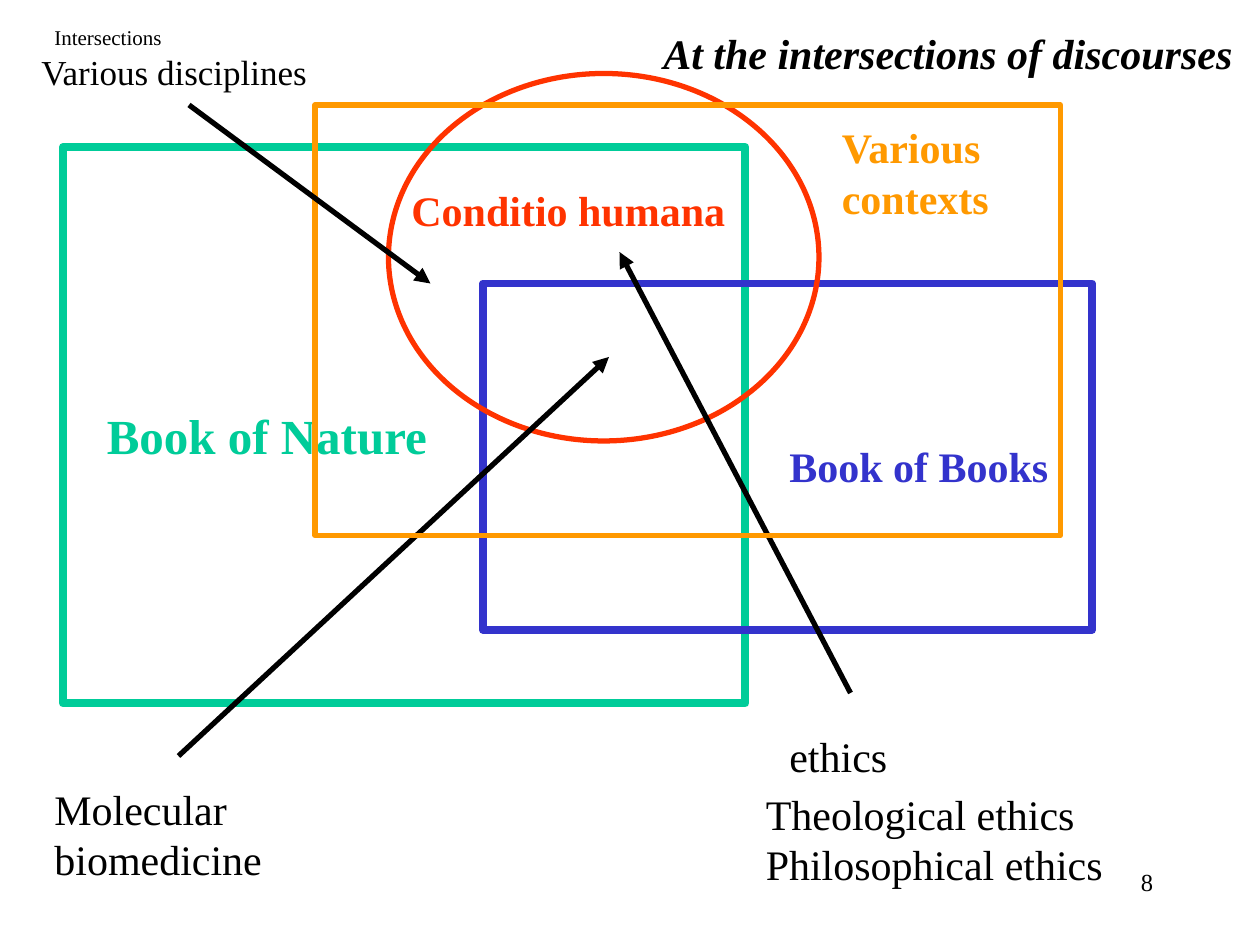
from typing import NamedTuple

from lxml.etree import SubElement
from pptx import Presentation
from pptx.dml.color import RGBColor
from pptx.enum.shapes import MSO_CONNECTOR as Connector, MSO_SHAPE as Preset
from pptx.enum.text import MSO_ANCHOR as Anchor, PP_ALIGN as Align
from pptx.oxml.ns import qn
from pptx.util import Pt

FONT = "Times New Roman"
BLACK, GREEN, BLUE = "000000", "00CC99", "3333CC"
RED, ORANGE = "FF3300", "FF9900"


class Region(NamedTuple):
    preset: Preset
    left: float
    top: float
    width: float
    height: float
    color: str
    weight: float


class Arrow(NamedTuple):
    start: tuple[float, float]
    end: tuple[float, float]


class Label(NamedTuple):
    text: str
    left: float
    top: float
    width: float
    height: float
    style: dict


def hex_color(value: str) -> RGBColor:
    return RGBColor.from_string(value)


def write_text(text_frame, text: str, *, size: float = 24, color: str = BLACK,
               bold: bool = False, italic: bool = False,
               align: Align = Align.LEFT, anchor: Anchor = Anchor.TOP,
               wrap: bool = False) -> None:
    text_frame.word_wrap = wrap
    text_frame.vertical_anchor = anchor
    text_frame.text = text
    for paragraph in text_frame.paragraphs:
        paragraph.alignment = align
        font = paragraph.runs[0].font
        font.name, font.size = FONT, Pt(size)
        font.bold, font.italic = bold, italic
        font.color.rgb = hex_color(color)


def draw_region(slide, region: Region) -> None:
    shape = slide.shapes.add_shape(
        region.preset, Pt(region.left), Pt(region.top),
        Pt(region.width), Pt(region.height))
    shape.shadow.inherit = False
    shape.fill.background()
    shape.line.color.rgb = hex_color(region.color)
    shape.line.width = Pt(region.weight)


def draw_arrow(slide, arrow: Arrow) -> None:
    connector = slide.shapes.add_connector(
        Connector.STRAIGHT, *map(Pt, arrow.start + arrow.end))
    connector.line.color.rgb = hex_color(BLACK)
    connector.line.width = Pt(3)
    properties = connector._element.spPr
    SubElement(properties.find(qn("a:ln")), qn("a:tailEnd"), type="triangle")
    SubElement(properties, qn("a:effectLst"))


def draw_label(slide, label: Label) -> None:
    box = slide.shapes.add_textbox(
        Pt(label.left), Pt(label.top), Pt(label.width), Pt(label.height))
    write_text(box.text_frame, label.text, **label.style)


ELEMENTS = [
    Label("Intersections", 24, 12, 198, 18,
          dict(size=12, anchor=Anchor.MIDDLE, wrap=True)),
    Region(Preset.RECTANGLE, 36, 84, 390, 318, GREEN, 4.5),
    Label("Book of Nature", 54, 228, 198, 41,
          dict(size=28, color=GREEN, bold=True)),
    Region(Preset.RECTANGLE, 276, 162, 348, 198, BLUE, 4.5),
    Label("Book of Books", 444, 248.4, 163, 36, dict(color=BLUE, bold=True)),
    Region(Preset.OVAL, 222, 42, 246, 210, RED, 3),
    Label("Conditio humana", 228, 102, 194, 36, dict(color=RED, bold=True)),
    Label("At the intersections of discourses", 372, 12, 340, 36,
          dict(bold=True, italic=True)),
    Label("Molecular\nbiomedicine", 24, 444, 238, 65, {}),
    Label("ethics", 444, 414, 71, 36, {}),
    Label("Theological ethics\nPhilosophical ethics", 430.5, 447, 207, 65, {}),
    Arrow((102, 432), (348, 204)),
    Arrow((486, 396), (354, 144)),
    Region(Preset.RECTANGLE, 180, 60, 426, 246, ORANGE, 3),
    Label("Various\ncontexts", 474, 66, 102, 65,
          dict(color=ORANGE, bold=True)),
    Label("Various disciplines", 16.5, 25.2, 168, 31, dict(size=20)),
    Arrow((108, 60), (246, 162)),
    Label("8", 516, 492, 150, 36, dict(size=14, align=Align.RIGHT, wrap=True)),
]

DRAWERS = {Region: draw_region, Arrow: draw_arrow, Label: draw_label}


def main() -> None:
    presentation = Presentation()
    presentation.slide_width, presentation.slide_height = Pt(720), Pt(540)
    slide = presentation.slides.add_slide(presentation.slide_layouts[6])
    for element in ELEMENTS:
        DRAWERS[type(element)](slide, element)
    presentation.save("out.pptx")


if __name__ == "__main__":
    main()
